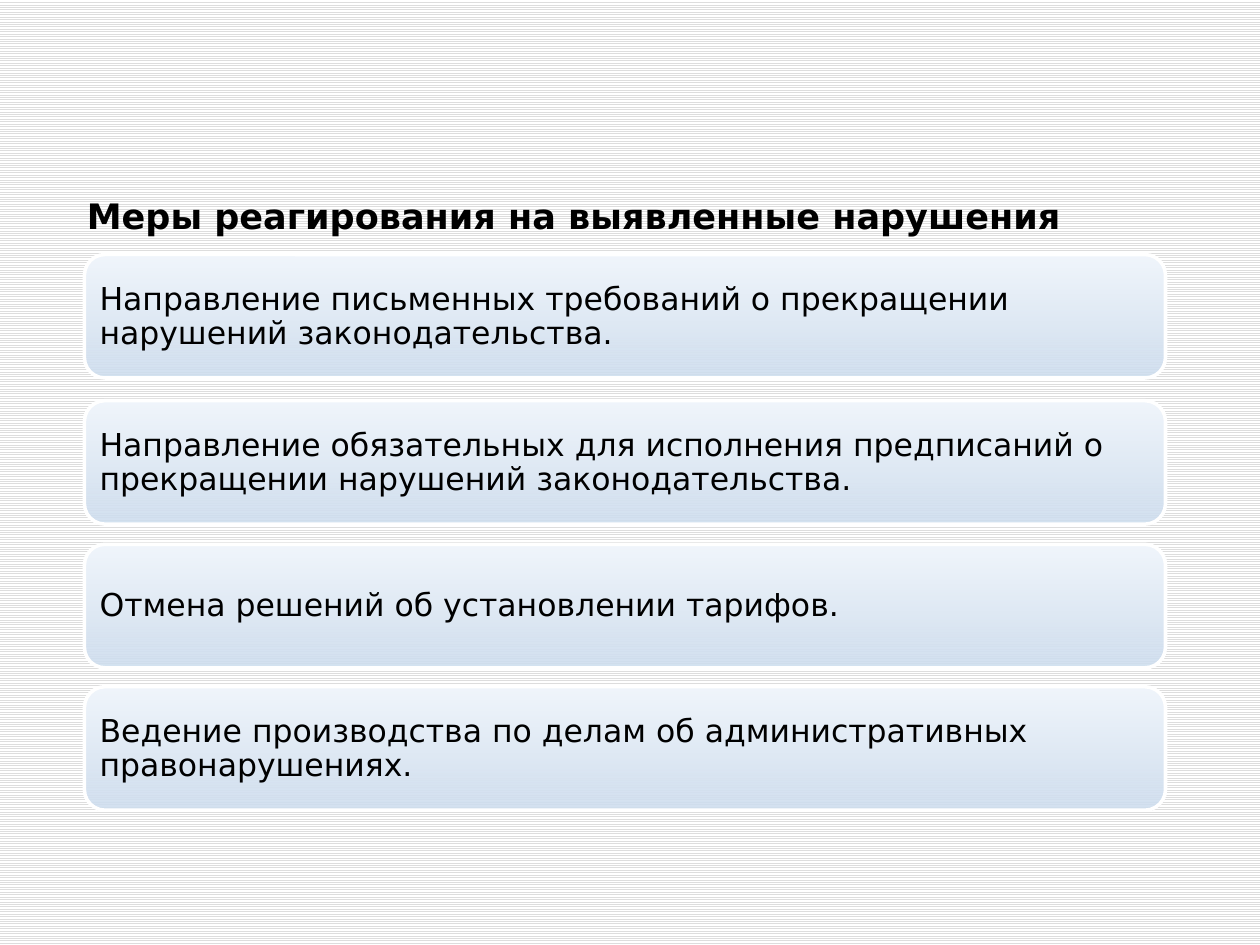
import pptx
import pptx.dml.color
import pptx.enum.dml
import pptx.enum.shapes
import pptx.enum.text
import pptx.oxml
import pptx.oxml.ns
import pptx.util

Inches = pptx.util.Inches
Anchor = pptx.enum.text.MSO_ANCHOR

HUES = {
    "ink": "000000",
    "paper": "FFFFFF",
    "stripe": "DDDDDD",
    "deep": "CCDCEE",
    "mid": "DBE6F2",
    "pale": "F0F5FB",
}
STOPS = [(0, "deep", 85), (35, "mid", 100), (100, "pale", 100)]
STEPS = [
    (2.02, "Направление письменных требований о прекращении нарушений законодательства."),
    (3.18, "Направление обязательных для исполнения предписаний о прекращении нарушений законодательства."),
    (4.32, "Отмена решений об установлении тарифов."),
    (5.45, "Ведение производства по делам об административных правонарушениях."),
]


class Deck:
    """Holds the style and the current slide."""

    font = "DejaVu Sans"

    def __init__(self, show):
        self.slide = show.slides.add_slide(show.slide_layouts[6])

    def hue(self, name):
        return pptx.dml.color.RGBColor.from_string(HUES[name])

    def back(self):
        fill = self.slide.background.fill
        fill.patterned()
        fill.pattern = pptx.enum.dml.MSO_PATTERN.LIGHT_HORIZONTAL
        fill.fore_color.rgb = self.hue("stripe")
        fill.back_color.rgb = self.hue("paper")

    def text(self, words, area, size, anchor, pads, bold=False, gap=None):
        box = self.slide.shapes.add_textbox(*map(Inches, area))
        frame = box.text_frame
        frame.word_wrap = True
        frame.vertical_anchor = anchor
        (frame.margin_left, frame.margin_top,
         frame.margin_right, frame.margin_bottom) = map(Inches, pads)
        para = frame.paragraphs[0]
        para.line_spacing = gap
        run = para.add_run()
        run.text = words
        run.font.name = self.font
        run.font.size = pptx.util.Pt(size)
        run.font.bold = bold
        run.font.color.rgb = self.hue("ink")

    def panel(self, area):
        kind = pptx.enum.shapes.MSO_SHAPE.ROUNDED_RECTANGLE
        box = self.slide.shapes.add_shape(kind, *map(Inches, area))
        box.shadow.inherit = False
        box.line.color.rgb = self.hue("paper")
        box.line.width = pptx.util.Pt(2)
        box.fill.gradient()
        box.fill.gradient_angle = 90
        stops = box._element.spPr.find(".//" + pptx.oxml.ns.qn("a:gsLst"))
        for old in list(stops):
            stops.remove(old)
        for pos, name, alpha in STOPS:
            stops.append(pptx.oxml.parse_xml(
                f'<a:gs {pptx.oxml.ns.nsdecls("a")} pos="{pos * 1000}">'
                f'<a:srgbClr val="{HUES[name]}"><a:alpha val="{alpha * 1000}"/>'
                '</a:srgbClr></a:gs>'))

    def step(self, top, words):
        self.panel((0.67, top, 8.58, 0.98))
        self.text(words, (0.72, top + 0.05, 8.49, 0.89), 18,
                  Anchor.MIDDLE, [0.07] * 4, gap=0.9)


def main():
    show = pptx.Presentation()
    show.slide_width, show.slide_height = Inches(10), Inches(7.5)
    deck = Deck(show)
    deck.back()
    deck.text("Меры реагирования на выявленные нарушения",
              (0.59, 0.92, 8.75, 1.33), 20, Anchor.BOTTOM,
              (0.1, 0.05, 0.1, 0.37), bold=True)
    for top, words in STEPS:
        deck.step(top, words)
    show.save("out.pptx")


if __name__ == "__main__":
    main()
